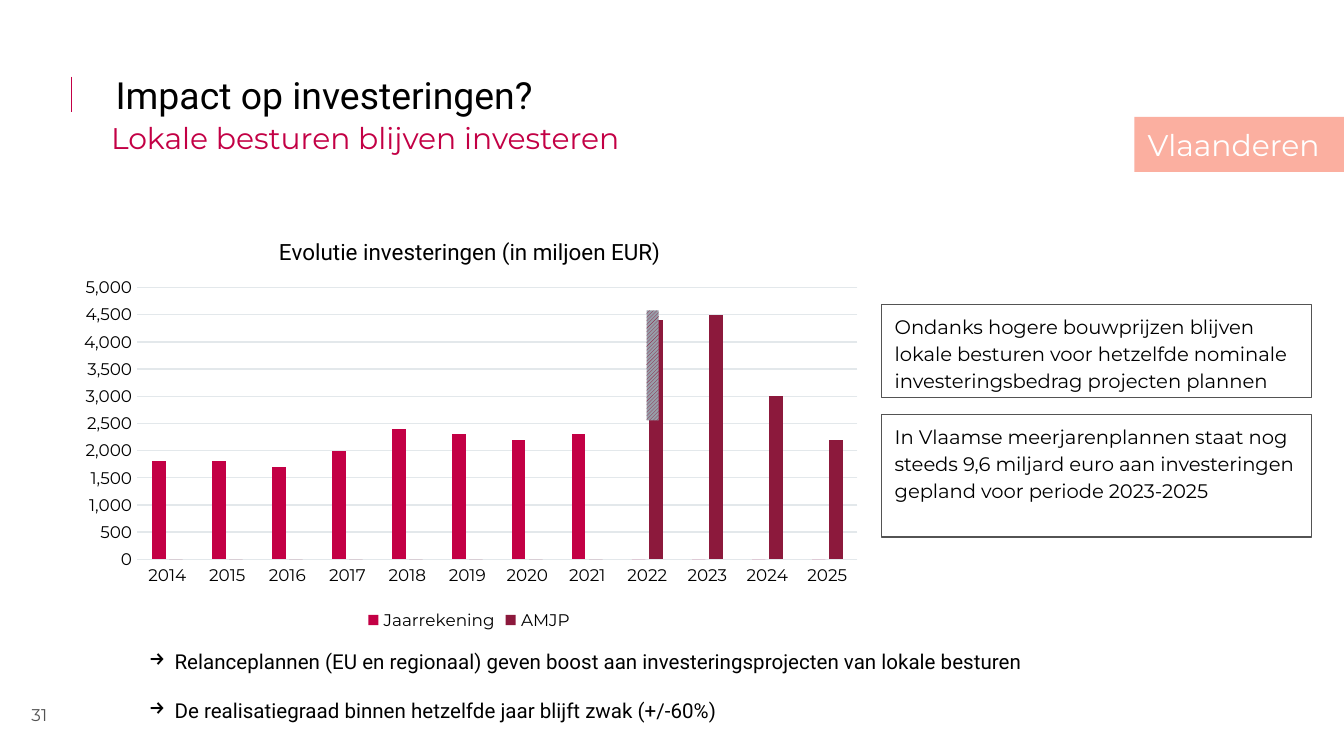
from dataclasses import dataclass
from typing import Optional

from lxml.etree import SubElement
from pptx import Presentation
from pptx.chart.data import CategoryChartData
from pptx.dml.color import RGBColor
from pptx.enum.chart import XL_CHART_TYPE, XL_LEGEND_POSITION, XL_TICK_MARK
from pptx.enum.dml import MSO_PATTERN
from pptx.enum.shapes import MSO_CONNECTOR, MSO_SHAPE
from pptx.enum.text import MSO_ANCHOR, PP_ALIGN
from pptx.oxml import parse_xml
from pptx.oxml.ns import nsdecls, qn
from pptx.util import Cm, Pt

BLACK = RGBColor(0x00, 0x00, 0x00)
WHITE = RGBColor(0xFF, 0xFF, 0xFF)
GREY = RGBColor(0x53, 0x53, 0x53)
GRID = RGBColor(0xE3, 0xE8, 0xEB)
CRIMSON = RGBColor(0xC3, 0x00, 0x45)
MAROON = RGBColor(0x8C, 0x19, 0x3C)
SALMON = RGBColor(0xFB, 0xAF, 0xA0)
STEEL = RGBColor(0x97, 0x9F, 0xAA)
HEADING_FONT = "Roboto"
BODY_FONT = "Montserrat"


@dataclass
class Area:
    left: float
    top: float
    width: float
    height: float

    def lengths(self):
        return [Cm(side) for side in (self.left, self.top, self.width, self.height)]


@dataclass
class TextStyle:
    size: float
    color: RGBColor = BLACK
    name: str = BODY_FONT
    spacing: Optional[float] = None
    align: PP_ALIGN = PP_ALIGN.LEFT


@dataclass
class Note:
    text: str
    area: Area


NOTES = [
    Note("Ondanks hogere bouwprijzen blijven lokale besturen voor hetzelfde nominale "
         "investeringsbedrag projecten plannen", Area(16.66, 5.76, 8.13, 1.76)),
    Note("In Vlaamse meerjarenplannen staat nog steeds 9,6 miljard euro aan "
         "investeringen gepland voor periode 2023-2025", Area(16.66, 7.84, 8.13, 2.31)),
]
CONCLUSIONS = [
    "Relanceplannen (EU en regionaal) geven boost aan investeringsprojecten van lokale besturen",
    "De realisatiegraad binnen hetzelfde jaar blijft zwak (+/-60%)",
]
YEARS = [str(year) for year in range(2014, 2026)]
ACCOUNTS = [1800, 1800, 1700, 2000, 2400, 2300, 2200, 2300] + [0] * 4
PLANS = [0] * 8 + [4400, 4500, 3000, 2200]


def set_font(font, style: TextStyle) -> None:
    font.name = style.name
    font.size = Pt(style.size)
    font.bold = False
    font.color.rgb = style.color


def write(para, text: str, style: TextStyle) -> None:
    para.text = text
    para.alignment = style.align
    if style.spacing:
        para.line_spacing = style.spacing
    set_font(para.font, style)


def add_text(page, text: str, area: Area, style: TextStyle):
    box = page.shapes.add_textbox(*area.lengths())
    box.text_frame.word_wrap = True
    write(box.text_frame.paragraphs[0], text, style)
    return box


def add_rectangle(page, area: Area):
    box = page.shapes.add_shape(MSO_SHAPE.RECTANGLE, *area.lengths())
    box.shadow.inherit = False
    box.line.fill.background()
    return box


def add_note(page, note: Note) -> None:
    box = add_rectangle(page, note.area)
    box.fill.background()
    box.line.color.rgb = GREY
    box.line.width = Pt(0.75)
    box.text_frame.word_wrap = True
    box.text_frame.vertical_anchor = MSO_ANCHOR.TOP
    write(box.text_frame.paragraphs[0], note.text, TextStyle(10.5, spacing=1.15))


def add_conclusions(page) -> None:
    box = page.shapes.add_textbox(*Area(2.57, 12.14, 22.8, 1.65).lengths())
    frame = box.text_frame
    frame.word_wrap = True
    for index, text in enumerate(CONCLUSIONS):
        para = frame.add_paragraph() if index else frame.paragraphs[0]
        properties = para._p.get_or_add_pPr()
        properties.set("marL", str(Cm(0.48)))
        properties.set("indent", str(-Cm(0.48)))
        if index:
            para.space_before = Pt(13)
        SubElement(properties, qn("a:buChar")).set("char", "→")
        write(para, text, TextStyle(11, name=HEADING_FONT))


def place(element, x: float, y: float, size: Optional[tuple] = None) -> None:
    """Give a chart part a manual layout, in fractions of the chart."""
    for old in element.findall(qn("c:layout")):
        element.remove(old)
    entries = [("xMode", "edge"), ("yMode", "edge"), ("x", x), ("y", y)]
    if size:
        entries = [("layoutTarget", "inner")] + entries + [("w", size[0]), ("h", size[1])]
    body = "".join(f'<c:{tag} val="{value}"/>' for tag, value in entries)
    layout = parse_xml(f'<c:layout {nsdecls("c")}><c:manualLayout>{body}'
                       "</c:manualLayout></c:layout>")
    text = element.find(qn("c:tx"))
    if text is None:
        element.insert(0, layout)
    else:
        text.addnext(layout)


def add_investment_chart(page) -> None:
    data = CategoryChartData(number_format="#,##0")
    data.categories = YEARS
    data.add_series("Jaarrekening", ACCOUNTS)
    data.add_series("AMJP", PLANS)
    chart = page.shapes.add_chart(XL_CHART_TYPE.COLUMN_CLUSTERED,
                                  *Area(1.22, 3.99, 15.29, 8.03).lengths(), data).chart
    label = TextStyle(9)
    set_font(chart.font, label)

    write(chart.chart_title.text_frame.paragraphs[0], "Evolutie investeringen (in miljoen EUR)",
          TextStyle(12, name=HEADING_FONT, align=PP_ALIGN.CENTER))
    chart.chart_title.include_in_layout = False
    place(chart.chart_title._element, 0.26, 0.05)
    chart.has_legend = True
    chart.legend.position = XL_LEGEND_POSITION.BOTTOM
    chart.legend.include_in_layout = False
    set_font(chart.legend.font, label)

    plot = chart.plots[0]
    plot.gap_width, plot.overlap = 219, -27
    plot.vary_by_categories = False
    for series, color in zip(plot.series, (CRIMSON, MAROON)):
        series.format.fill.solid()
        series.format.fill.fore_color.rgb = color
    place(chart._chartSpace.chart.plotArea, 0.09, 0.18, (0.89, 0.64))

    values, categories = chart.value_axis, chart.category_axis
    for axis in (values, categories):
        axis.major_tick_mark = axis.minor_tick_mark = XL_TICK_MARK.NONE
        set_font(axis.tick_labels.font, label)
    values.minimum_scale, values.maximum_scale, values.major_unit = 0, 5000, 500
    values.tick_labels.number_format = "#,##0"
    values.tick_labels.number_format_is_linked = False
    values.format.line.fill.background()
    for line in (values.major_gridlines.format.line, categories.format.line):
        line.color.rgb = GRID
        line.width = Pt(0.75)


def add_header(page) -> None:
    bar = page.shapes.add_connector(MSO_CONNECTOR.STRAIGHT, Cm(1.35), Cm(1.45), Cm(1.35), Cm(2.11))
    bar.line.color.rgb = CRIMSON
    bar.line.width = Pt(0.75)
    SubElement(bar._element.spPr, qn("a:effectLst"))

    title = page.shapes.title
    title.left, title.top, title.width, title.height = Area(1.93, 1.35, 22.1, 0.86).lengths()
    title.text_frame.vertical_anchor = MSO_ANCHOR.MIDDLE
    write(title.text_frame.paragraphs[0], "Impact op investeringen?",
          TextStyle(20, name=HEADING_FONT))
    add_text(page, "Lokale besturen blijven investeren", Area(1.85, 2.03, 17.42, 1.19),
             TextStyle(16, CRIMSON, spacing=1.15))

    tag = add_rectangle(page, Area(21.44, 2.21, 3.96, 1.04))
    tag.fill.solid()
    tag.fill.fore_color.rgb = SALMON
    write(tag.text_frame.paragraphs[0], "Vlaanderen", TextStyle(16, WHITE))


def main() -> None:
    deck = Presentation()
    deck.slide_width, deck.slide_height = Cm(25.4), Cm(14.29)
    page = deck.slides.add_slide(deck.slide_layouts[5])
    add_header(page)
    for note in NOTES:
        add_note(page, note)
    add_investment_chart(page)
    add_conclusions(page)

    hatch = add_rectangle(page, Area(12.22, 5.87, 0.23, 2.08))
    hatch.fill.patterned()
    hatch.fill.pattern = MSO_PATTERN.DARK_UPWARD_DIAGONAL
    hatch.fill.fore_color.rgb = MAROON
    hatch.fill.back_color.rgb = STEEL

    number = add_text(page, "31", Area(0.3, 13.21, 0.89, 0.58),
                      TextStyle(9.1, GREY, align=PP_ALIGN.CENTER))
    frame = number.text_frame
    frame.margin_left = frame.margin_right = frame.margin_top = frame.margin_bottom = Cm(0.1)
    deck.save("out.pptx")


if __name__ == "__main__":
    main()
